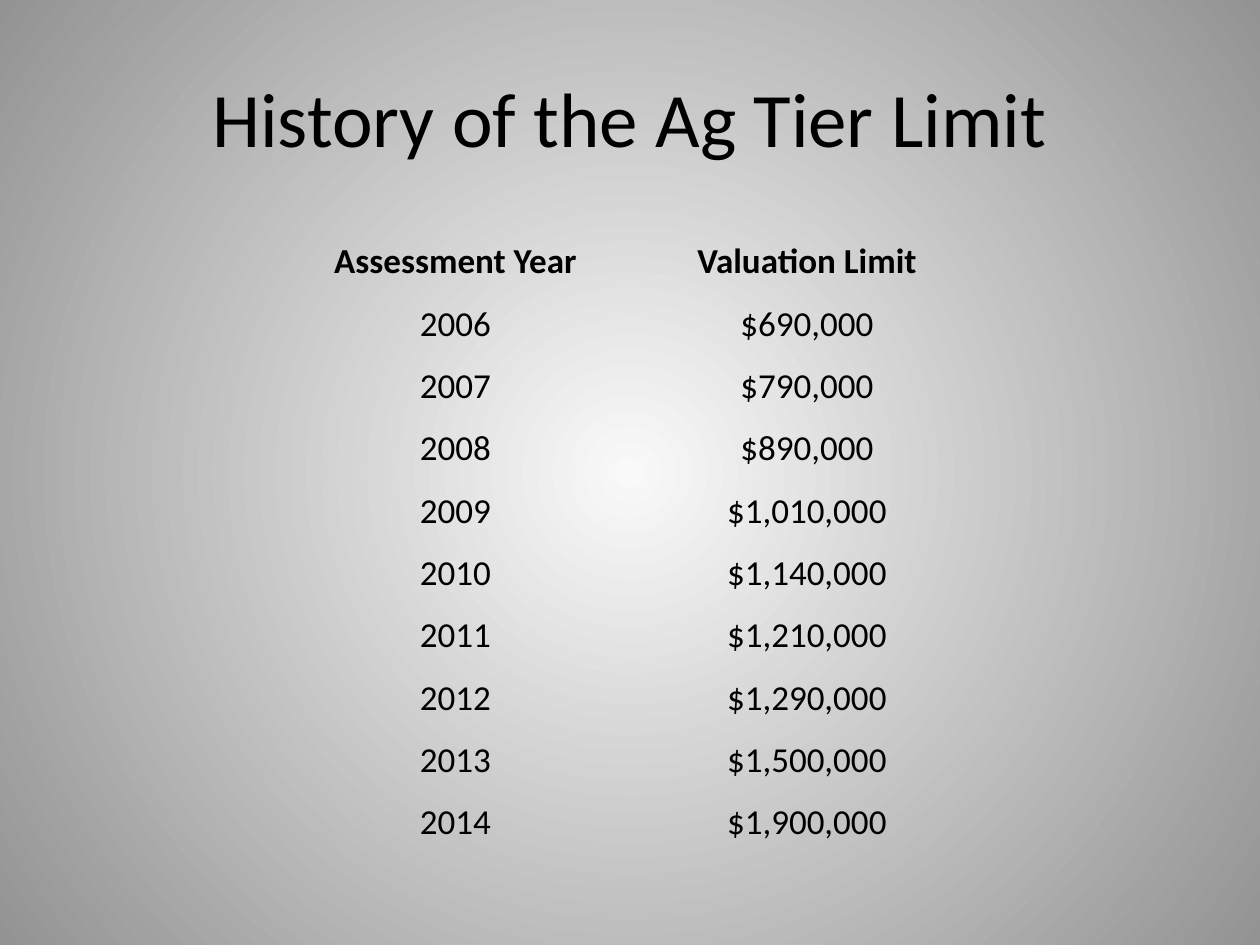
from dataclasses import dataclass

from lxml import etree
from pptx import Presentation
from pptx.dml.color import RGBColor
from pptx.enum.text import MSO_ANCHOR as Anchor, PP_ALIGN as Align
from pptx.oxml.ns import qn
from pptx.util import Inches, Pt

FONT = "Calibri"
BLACK = "000000"
NO_GRID_STYLE = "{2D5ABB26-0587-4C30-8999-92F81FD0307C}"
COLUMN_WIDTHS = (3.07, 2.51)
ROW_HEIGHT = 0.495
CELL_FORMAT = {
    "vertical_anchor": Anchor.MIDDLE,
    "margin_left": Inches(0.03),
    "margin_right": Inches(0.03),
    "margin_top": Inches(0.01),
    "margin_bottom": Inches(0.01),
}


@dataclass(frozen=True)
class LimitRow:
    year: str
    limit: str
    bold: bool = False


LIMITS = [
    LimitRow("Assessment Year", "Valuation Limit", bold=True),
    LimitRow("2006", "$690,000"),
    LimitRow("2007", "$790,000"),
    LimitRow("2008", "$890,000"),
    LimitRow("2009", "$1,010,000"),
    LimitRow("2010", "$1,140,000"),
    LimitRow("2011", "$1,210,000"),
    LimitRow("2012", "$1,290,000"),
    LimitRow("2013", "$1,500,000"),
    LimitRow("2014", "$1,900,000"),
]


def color(value: str) -> RGBColor:
    return RGBColor.from_string(value)


def apply_format(target, values: dict) -> None:
    for name, value in values.items():
        setattr(target, name, value)


def write_text(frame, text: str, size: int, bold: bool = False) -> None:
    paragraph = frame.paragraphs[0]
    paragraph.alignment = Align.CENTER
    run = paragraph.add_run()
    run.text = text
    apply_format(run.font, {"name": FONT, "size": Pt(size), "bold": bold})
    run.font.color.rgb = color(BLACK)


def paint_background(slide, center: str, edge: str) -> None:
    fill = slide.background.fill
    fill.gradient()
    for stop, shade in zip(fill.gradient_stops, (center, edge)):
        stop.color.rgb = color(shade)
    # Turn the linear gradient into a circular one around the middle
    linear = next(slide.element.iter(qn("a:lin")))
    circle = etree.Element(qn("a:path"), {"path": "circle"})
    sides = dict.fromkeys("ltrb", "50000")
    etree.SubElement(circle, qn("a:fillToRect"), sides)
    linear.getparent().replace(linear, circle)


def add_title(slide, text: str) -> None:
    box = slide.shapes.add_textbox(Inches(0.5), Inches(0.3), Inches(9), Inches(1.25))
    frame = box.text_frame
    apply_format(frame, {"word_wrap": True, "vertical_anchor": Anchor.MIDDLE})
    write_text(frame, text, 44)


def add_limit_table(slide, rows: list[LimitRow]) -> None:
    table = slide.shapes.add_table(
        len(rows), len(COLUMN_WIDTHS), Inches(2.08), Inches(1.83),
        Inches(sum(COLUMN_WIDTHS)), Inches(ROW_HEIGHT * len(rows)),
    ).table
    apply_format(table, {"first_row": False, "horz_banding": False})
    next(slide.element.iter(qn("a:tableStyleId"))).text = NO_GRID_STYLE
    for column, width in zip(table.columns, COLUMN_WIDTHS):
        column.width = Inches(width)
    for table_row, row in zip(table.rows, rows):
        table_row.height = Inches(ROW_HEIGHT)
        for cell, text in zip(table_row.cells, (row.year, row.limit)):
            apply_format(cell, CELL_FORMAT)
            cell.fill.background()
            write_text(cell.text_frame, text, 20, row.bold)


def main() -> None:
    deck = Presentation()
    apply_format(deck, {"slide_width": Inches(10), "slide_height": Inches(7.5)})
    slide = deck.slides.add_slide(deck.slide_layouts[6])

    # Background, heading and yearly limits
    paint_background(slide, "F9F9F9", "939393")
    add_title(slide, "History of the Ag Tier Limit")
    add_limit_table(slide, LIMITS)

    deck.save("out.pptx")


if __name__ == "__main__":
    main()
